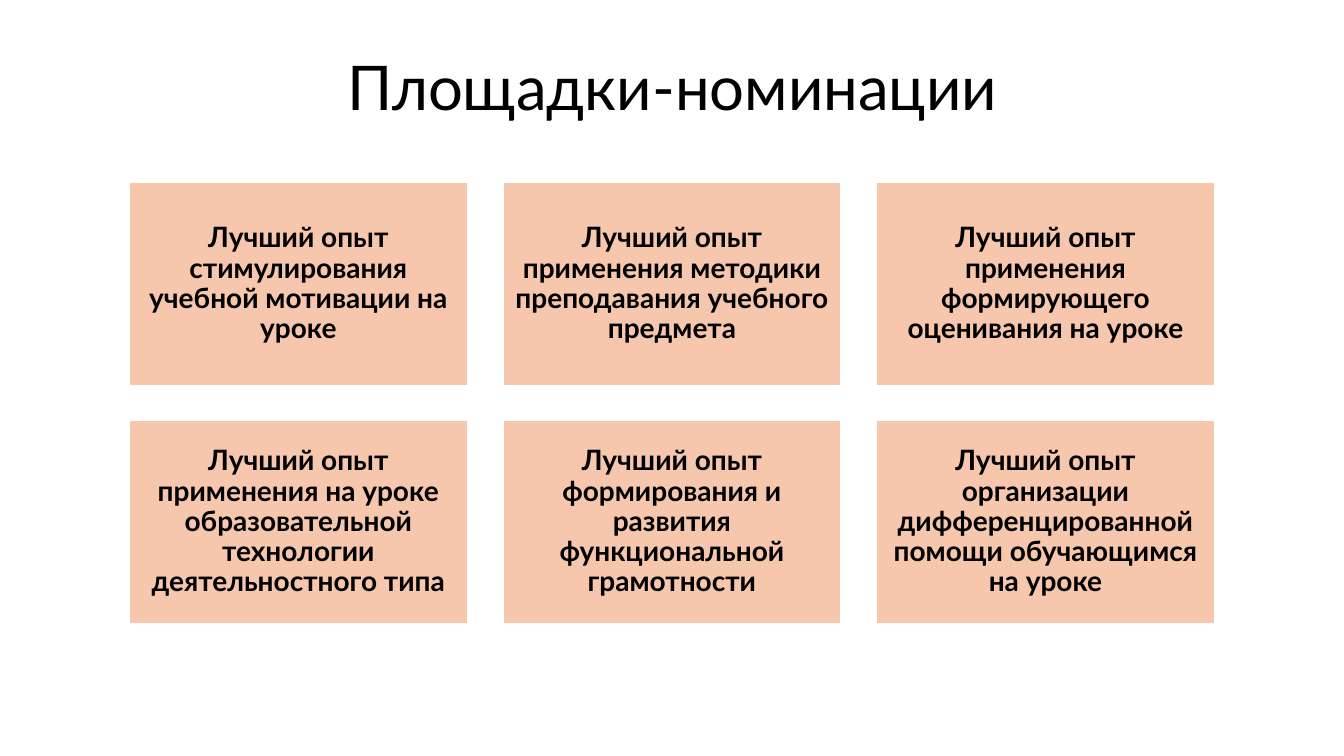
import pptx
import pptx.dml.color
import pptx.enum.shapes
import pptx.enum.text
import pptx.util

Inches = pptx.util.Inches
Pt = pptx.util.Pt

TITLE = "Площадки-номинации"
AWARDS = [
    "Лучший опыт стимулирования учебной мотивации на уроке",
    "Лучший опыт применения методики преподавания учебного предмета",
    "Лучший опыт применения формирующего оценивания на уроке",
    "Лучший опыт применения на уроке образовательной технологии деятельностного типа",
    "Лучший опыт формирования и развития функциональной грамотности",
    "Лучший опыт организации дифференцированной помощи обучающимся на уроке",
]

THEME = {
    "font": "Lato",
    "ink": "000000",
    "card": "F6C6AD",
    "edge": "FFFFFF",
    "title": 44,
    "body": 20,
}

COLS = 3
LEFT, TOP = 1.28, 1.81
WIDE, HIGH = 3.36, 2.02
GAP_X, GAP_Y = 0.345, 0.34


def color(name):
    return pptx.dml.color.RGBColor.from_string(THEME[name])


def write(shape, text, size="body", bold=False, inset=0.08, after=0):
    frame = shape.text_frame
    frame.word_wrap = True
    frame.vertical_anchor = pptx.enum.text.MSO_ANCHOR.MIDDLE
    frame.margin_left = frame.margin_right = Inches(inset)
    frame.margin_top = frame.margin_bottom = Inches(inset)
    para = frame.paragraphs[0]
    para.alignment = pptx.enum.text.PP_ALIGN.CENTER
    para.line_spacing = 0.9
    para.space_after = Pt(after)
    run = para.add_run()
    run.text = text
    run.font.name = THEME["font"]
    run.font.size = Pt(THEME[size])
    run.font.bold = bold
    run.font.color.rgb = color("ink")


def add_card(slide, index, text):
    row, col = divmod(index, COLS)
    card = slide.shapes.add_shape(
        pptx.enum.shapes.MSO_SHAPE.RECTANGLE,
        Inches(LEFT + col * (WIDE + GAP_X)),
        Inches(TOP + row * (HIGH + GAP_Y)),
        Inches(WIDE),
        Inches(HIGH),
    )
    card.shadow.inherit = False
    card.fill.solid()
    card.fill.fore_color.rgb = color("card")
    card.line.color.rgb = color("edge")
    card.line.width = Pt(1.5)
    write(card, text, bold=True, after=7)


def main():
    deck = pptx.Presentation()
    deck.slide_width = Inches(13.33)
    deck.slide_height = Inches(7.5)
    slide = deck.slides.add_slide(deck.slide_layouts[6])
    title = slide.shapes.add_textbox(
        Inches(0.92), Inches(0.17), Inches(11.5), Inches(1.45)
    )
    write(title, TITLE, size="title", inset=0.05)
    for index, text in enumerate(AWARDS):
        add_card(slide, index, text)
    deck.save("out.pptx")


if __name__ == "__main__":
    main()
